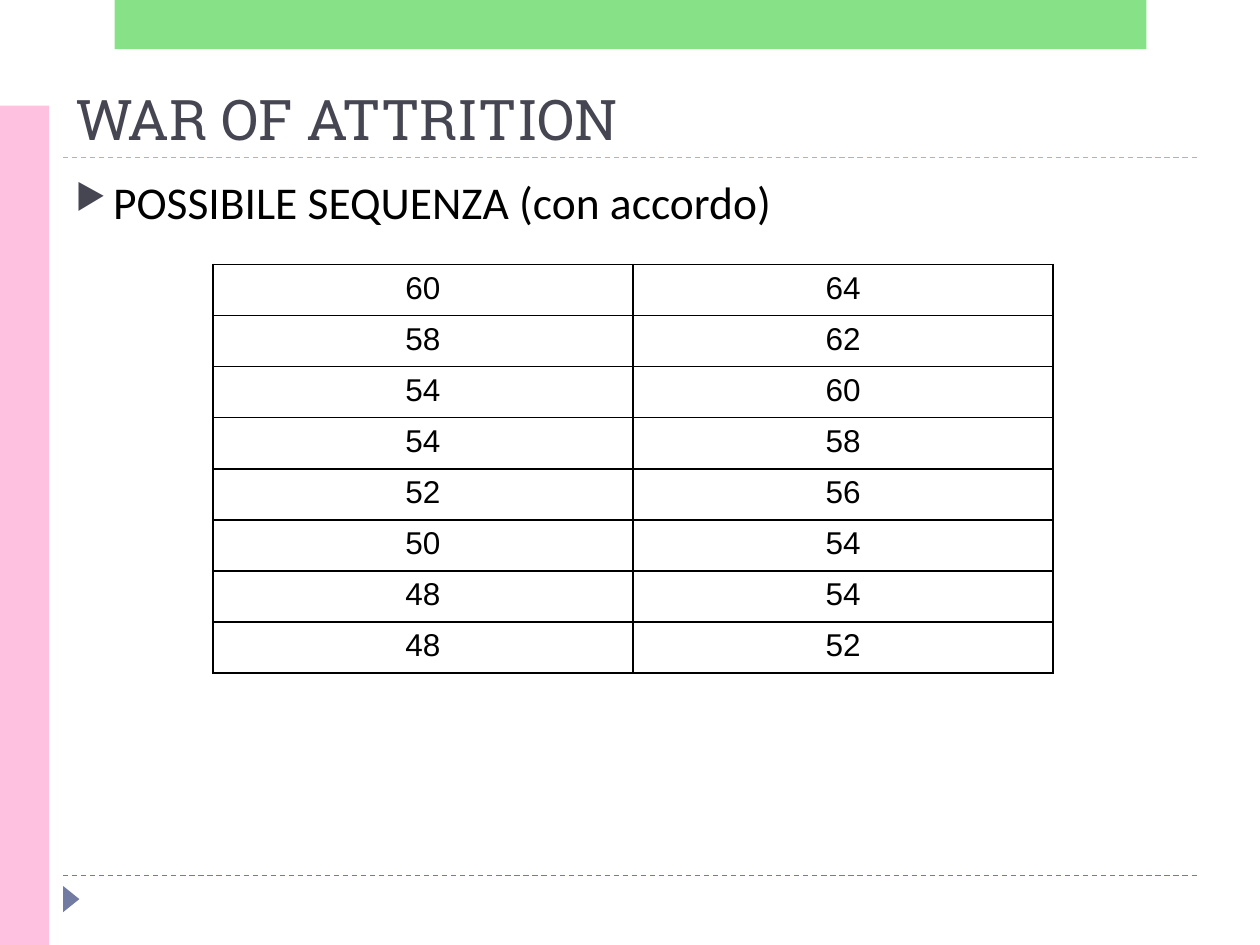
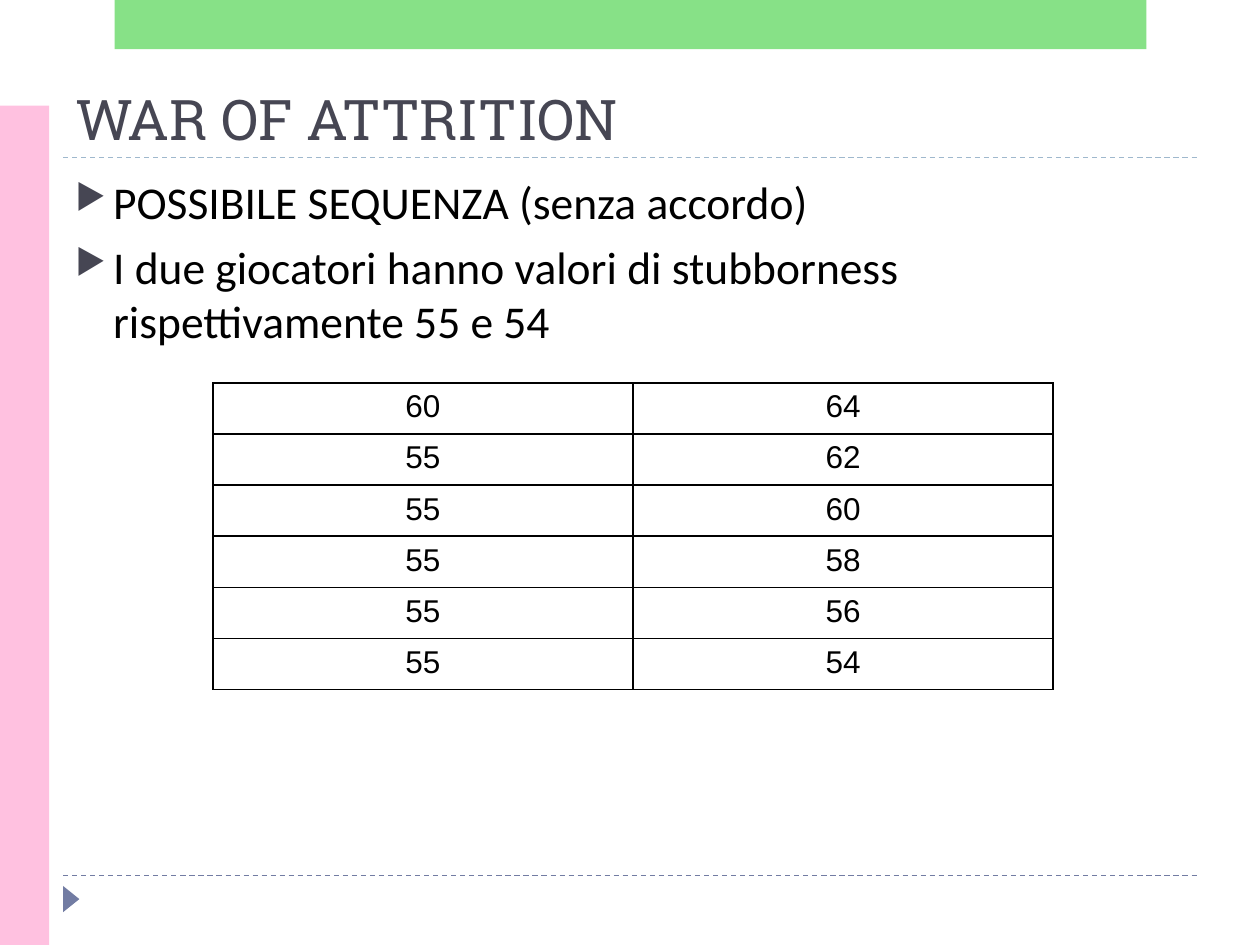
from lxml import etree
from pptx import Presentation
from pptx.dml.color import RGBColor
from pptx.enum.dml import MSO_LINE_DASH_STYLE as DASH
from pptx.enum.shapes import MSO_CONNECTOR as CONN, MSO_SHAPE as SHAPE
from pptx.enum.text import MSO_ANCHOR as ANCHOR, PP_ALIGN as ALIGN
from pptx.oxml import parse_xml
from pptx.oxml.ns import nsdecls, qn
from pptx.util import Cm, Pt

INK, BLACK, SLATE, MIST = "464653", "000000", "727CA3", "9FB8CD"
PINK, GREEN = "FFC1E0", "62D862"
WIDTH, HEIGHT = 25.4, 19.05
LEFT, CONTENT_W = 1.27, 22.86
COL_W, ROW_H = 8.47, 1.03

TITLE_FONT = {"name": "Roboto Slab", "size": Pt(32), "bold": False}
BODY_FONT = {"name": "Calibri", "size": Pt(26), "bold": False}
CELL_FONT = {"name": "Arial", "size": Pt(18), "bold": False}

SLIDES = [
    (["POSSIBILE SEQUENZA (con accordo)"], 5.33,
     [(60, 64), (58, 62), (54, 60), (54, 58), (52, 56), (50, 54), (48, 54), (48, 52)]),
    (["POSSIBILE SEQUENZA (senza accordo)",
      "I due giocatori hanno valori di stubborness rispettivamente 55 e 54"], 7.72,
     [(60, 64), (55, 62), (55, 60), (55, 58), (55, 56), (55, 54)]),
]


def color(value):
    return RGBColor.from_string(value)


def add_text(p, text, look, ink):
    r = p.add_run()
    r.text = text
    for name, value in look.items():
        setattr(r.font, name, value)
    r.font.color.rgb = color(ink)


def add_box(s, left, top, width, height, anchor):
    tf = s.shapes.add_textbox(Cm(left), Cm(top), Cm(width), Cm(height)).text_frame
    tf.word_wrap = True
    tf.vertical_anchor = anchor
    return tf


def add_block(s, kind, left, top, width, height, fill):
    sp = s.shapes.add_shape(kind, Cm(left), Cm(top), Cm(width), Cm(height))
    sp.shadow.inherit = False
    sp.fill.solid()
    sp.fill.fore_color.rgb = color(fill)
    sp.line.fill.background()
    return sp


def add_rule(s, left, top, width, ink):
    line = s.shapes.add_connector(CONN.STRAIGHT, Cm(left), Cm(top), Cm(left + width), Cm(top))
    line.line.color.rgb = color(ink)
    line.line.width = Pt(0.75)
    line.line.dash_style = DASH.DASH
    etree.SubElement(line._element.spPr, qn("a:effectLst"))


def add_frame(s):
    add_rule(s, LEFT, 17.65, CONTENT_W, SLATE)
    add_rule(s, LEFT, 3.18, CONTENT_W, MIST)
    add_block(s, SHAPE.ISOSCELES_TRIANGLE, 1.17, 17.96, 0.53, 0.33, SLATE).rotation = 90
    add_block(s, SHAPE.RECTANGLE, 0, 2.13, 0.99, HEIGHT - 2.13, PINK)
    band = add_block(s, SHAPE.RECTANGLE, 2.31, 0, 20.8, 0.99, GREEN)
    fill = band._element.spPr.find(qn("a:solidFill"))
    etree.SubElement(fill[0], qn("a:alpha"), val="76000")


def add_title(s, text, left, top, width, height):
    tf = add_box(s, left, top, width, height, ANCHOR.BOTTOM)
    add_text(tf.paragraphs[0], text, TITLE_FONT, INK)


def add_bullet(p):
    pPr = p._p.get_or_add_pPr()
    pPr.set("marL", str(Cm(0.76)))
    pPr.set("indent", str(-Cm(0.76)))
    etree.SubElement(etree.SubElement(pPr, qn("a:buClr")), qn("a:srgbClr"), val=INK)
    etree.SubElement(pPr, qn("a:buSzPct"), val="76000")
    etree.SubElement(pPr, qn("a:buChar"), char="▶")


def add_points(s, points, left, top, width, height):
    tf = add_box(s, left, top, width, height, ANCHOR.TOP)
    for i, point in enumerate(points):
        p = tf.add_paragraph() if i else tf.paragraphs[0]
        add_bullet(p)
        p.space_before = Pt(6 if i else 0)
        add_text(p, point, BODY_FONT, BLACK)


def add_borders(cell):
    tcPr = cell._tc.get_or_add_tcPr()
    for i, side in enumerate(("lnL", "lnR", "lnT", "lnB")):
        tcPr.insert(i, parse_xml(
            f'<a:{side} {nsdecls("a")} w="{Pt(1)}"><a:solidFill>'
            f'<a:srgbClr val="{BLACK}"/></a:solidFill></a:{side}>'))


def add_offers(s, offers, left, top):
    rows, cols = len(offers), len(offers[0])
    table = s.shapes.add_table(rows, cols, Cm(left), Cm(top),
                               Cm(cols * COL_W), Cm(rows * ROW_H)).table
    table.first_row = table.horz_banding = False
    for row, pair in zip(table.rows, offers):
        row.height = Cm(ROW_H)
        for cell, offer in zip(row.cells, pair):
            cell.fill.background()
            add_borders(cell)
            p = cell.text_frame.paragraphs[0]
            p.alignment = ALIGN.CENTER
            add_text(p, str(offer), CELL_FONT, BLACK)


def main():
    prs = Presentation()
    prs.slide_width, prs.slide_height = Cm(WIDTH), Cm(HEIGHT)
    for points, table_top, offers in SLIDES:
        s = prs.slides.add_slide(prs.slide_layouts[6])
        add_frame(s)
        add_title(s, "WAR OF ATTRITION", LEFT, 1.4, CONTENT_W, 1.78)
        add_points(s, points, LEFT, 3.38, CONTENT_W, 13.72)
        add_offers(s, offers, 4.29, table_top)
    prs.save("out.pptx")


if __name__ == "__main__":
    main()
